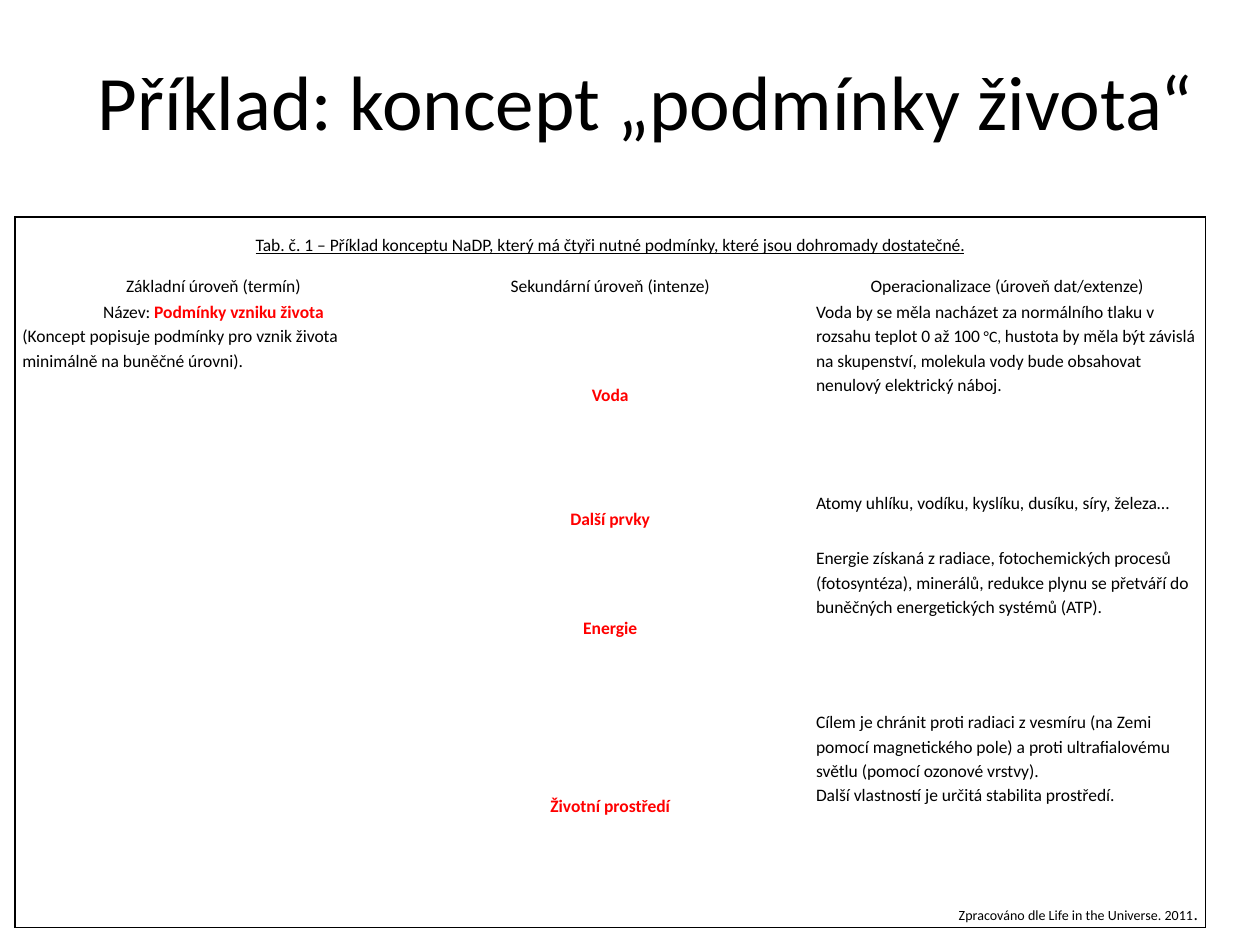
from dataclasses import dataclass

from lxml.etree import SubElement
from pptx import Presentation
from pptx.dml.color import RGBColor
from pptx.enum.text import MSO_ANCHOR as Anchor, PP_ALIGN as Align
from pptx.oxml.ns import qn
from pptx.util import Cm, Pt

FONT = "Calibri"
BLACK = "000000"
RED = "FF0000"
ROW_HEIGHTS = (1.1, 0.55, 3.86, 1.11, 3.3, 3.86, 0.55)
COLUMN_COUNT = 3
COLUMN_WIDTH = 8.0


@dataclass(frozen=True)
class Words:
    text: str
    size: float = 10
    color: str = BLACK
    bold: bool = False
    underline: bool = False


@dataclass(frozen=True)
class Line:
    words: tuple[Words, ...]
    align: Align = Align.LEFT


@dataclass(frozen=True)
class Entry:
    row: int
    column: int
    lines: tuple[Line, ...]
    anchor: Anchor = Anchor.TOP


@dataclass(frozen=True)
class Condition:
    name: str
    evidence: tuple[Line, ...]


def plain(text: str) -> Line:
    return Line((Words(text),))


def centred(row: int, column: int, words: Words) -> Entry:
    return Entry(row, column, (Line((words,), Align.CENTER),), Anchor.MIDDLE)


CAPTION = Words(
    "Tab. č. 1 – Příklad konceptu NaDP, který má čtyři nutné podmínky, "
    "které jsou dohromady dostatečné.",
    underline=True,
)
LEVELS = (
    "Základní úroveň (termín)",
    "Sekundární úroveň (intenze)",
    "Operacionalizace (úroveň dat/extenze)",
)
TERM = (
    Line((Words("Název: "), Words("Podmínky vzniku života", color=RED, bold=True)), Align.CENTER),
    plain("(Koncept popisuje podmínky pro vznik života minimálně na buněčné úrovni)."),
)
CONDITIONS = (
    Condition("Voda", (Line((
        Words("Voda by se měla nacházet za normálního tlaku v rozsahu teplot 0 až 100 "),
        Words("°C, ", size=9),
        Words("hustota by měla být závislá na skupenství, molekula vody bude "
              "obsahovat nenulový elektrický náboj."),
    )),)),
    Condition("Další prvky", (
        plain("Atomy uhlíku, vodíku, kyslíku, dusíku, síry, železa…"),
    )),
    Condition("Energie", (
        plain("Energie získaná z radiace, fotochemických procesů (fotosyntéza), minerálů, "
              "redukce plynu se přetváří do buněčných energetických systémů (ATP)."),
    )),
    Condition("Životní prostředí", (
        plain("Cílem je chránit proti radiaci z vesmíru (na Zemi pomocí magnetického pole) "
              "a proti ultrafialovému světlu (pomocí ozonové vrstvy)."),
        plain("Další vlastností je určitá stabilita prostředí."),
    )),
)
CREDIT = Line(
    (Words("Zpracováno dle Life in the Universe. 2011", size=8), Words(".")), Align.RIGHT
)


def set_color(font, color: str) -> None:
    font.color.rgb = RGBColor.from_string(color)


def write_line(paragraph, line: Line) -> None:
    paragraph.alignment = line.align
    for words in line.words:
        run = paragraph.add_run()
        run.text = words.text
        font = run.font
        font.name = FONT
        font.size = Pt(words.size)
        font.bold = words.bold
        font.underline = words.underline
        set_color(font, words.color)


def write_entry(table, entry: Entry) -> None:
    cell = table.cell(entry.row, entry.column)
    cell.vertical_anchor = entry.anchor
    frame = cell.text_frame
    for index, line in enumerate(entry.lines):
        paragraph = frame.add_paragraph() if index else frame.paragraphs[0]
        paragraph.line_spacing = 1.15
        write_line(paragraph, line)


def set_borders(cell, sides: dict[str, bool]) -> None:
    properties = cell._tc.get_or_add_tcPr()
    for side, visible in sides.items():
        edge = SubElement(properties, qn(f"a:ln{side}"), w=str(Pt(1)))
        if visible:
            fill = SubElement(edge, qn("a:solidFill"))
            SubElement(fill, qn("a:srgbClr"), val=BLACK)
        else:
            SubElement(edge, qn("a:noFill"))


def style_cells(table) -> None:
    last_row = len(ROW_HEIGHTS) - 1
    for row in range(len(ROW_HEIGHTS)):
        for column in range(COLUMN_COUNT):
            cell = table.cell(row, column)
            cell.margin_left = cell.margin_right = Cm(0.15)
            cell.margin_top = cell.margin_bottom = 0
            span = cell.span_width if cell.is_merge_origin else 1
            set_borders(cell, {
                "L": column == 0,
                "R": column + span == COLUMN_COUNT,
                "T": row == 0,
                "B": row == last_row,
            })
            cell.fill.background()


def draw_title(slide) -> None:
    title = slide.shapes.add_textbox(Cm(1.7), Cm(0.64), Cm(22.66), Cm(2.74))
    frame = title.text_frame
    frame.word_wrap = True
    frame.vertical_anchor = Anchor.MIDDLE
    write_line(frame.paragraphs[0],
               Line((Words("Příklad: koncept „podmínky života“", size=44),), Align.CENTER))


def draw_concept(slide) -> None:
    last_row = len(ROW_HEIGHTS) - 1
    table = slide.shapes.add_table(
        len(ROW_HEIGHTS), COLUMN_COUNT, Cm(0.3), Cm(4.37),
        Cm(COLUMN_WIDTH * COLUMN_COUNT), Cm(sum(ROW_HEIGHTS)),
    ).table
    table.first_row = False
    table.horz_banding = False
    for column in table.columns:
        column.width = Cm(COLUMN_WIDTH)
    for row, height in zip(table.rows, ROW_HEIGHTS):
        row.height = Cm(height)
    for row in (0, last_row):
        table.cell(row, 0).merge(table.cell(row, COLUMN_COUNT - 1))
    table.cell(2, 0).merge(table.cell(last_row - 1, 0))
    style_cells(table)

    entries = [centred(0, 0, CAPTION), Entry(2, 0, TERM), Entry(last_row, 0, (CREDIT,))]
    entries += [centred(1, column, Words(level)) for column, level in enumerate(LEVELS)]
    for row, condition in enumerate(CONDITIONS, start=2):
        entries.append(centred(row, 1, Words(condition.name, color=RED, bold=True)))
        entries.append(Entry(row, 2, condition.evidence))
    for entry in entries:
        write_entry(table, entry)


def main() -> None:
    deck = Presentation()
    deck.slide_width = Cm(25.4)
    deck.slide_height = Cm(19.05)
    slide = deck.slides.add_slide(deck.slide_layouts[6])
    draw_title(slide)
    draw_concept(slide)
    deck.save("out.pptx")


if __name__ == "__main__":
    main()
